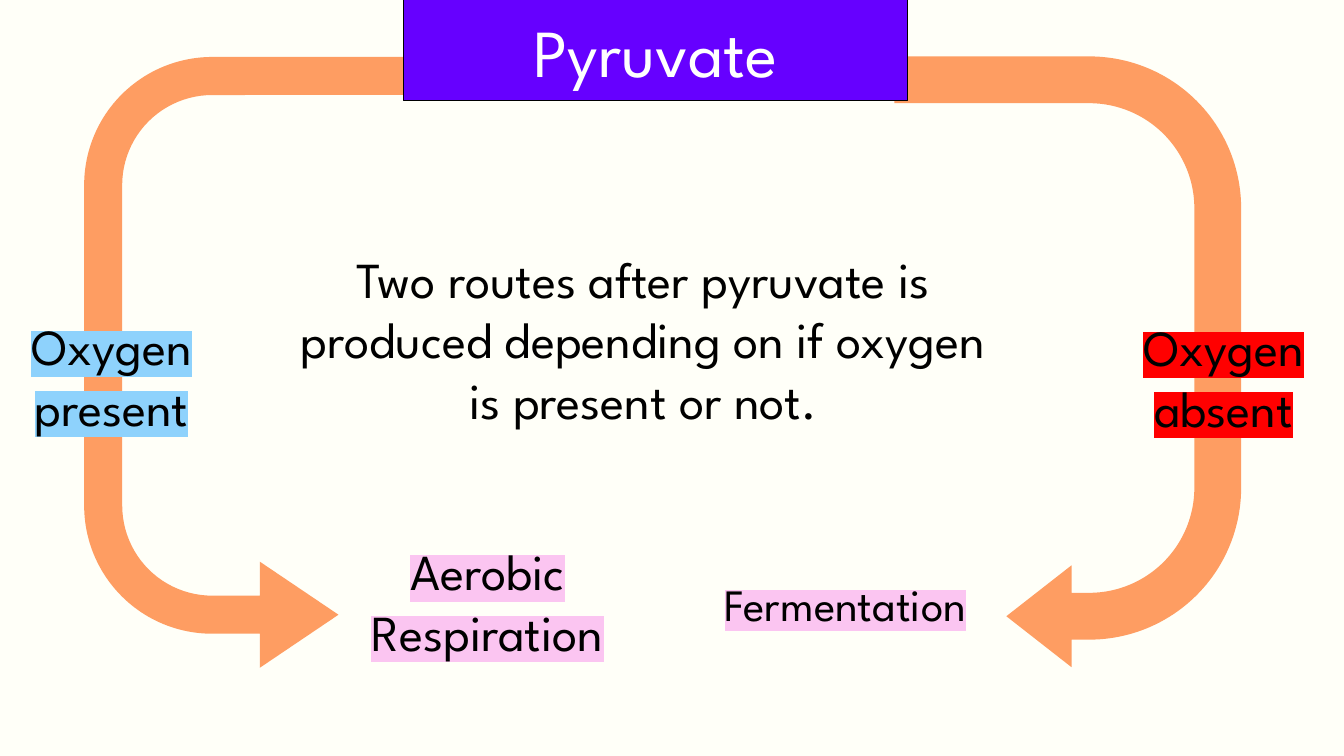
from lxml import etree
from pptx import Presentation
from pptx.dml.color import RGBColor
from pptx.enum.shapes import MSO_SHAPE
from pptx.enum.text import MSO_ANCHOR, MSO_AUTO_SIZE, PP_ALIGN
from pptx.oxml.ns import qn
from pptx.util import Inches, Pt

FONT = "League Spartan"
CREAM = RGBColor(0xFF, 0xFF, 0xF8)
ORANGE = RGBColor(0xFE, 0x9D, 0x62)
PURPLE = RGBColor(0x66, 0x00, 0xFF)
BLACK = RGBColor(0x00, 0x00, 0x00)
WHITE = RGBColor(0xFF, 0xFF, 0xFF)
PINK = RGBColor(0xFB, 0xC5, 0xF1)
BLUE = RGBColor(0x8E, 0xD2, 0xFC)
RED = RGBColor(0xFF, 0x00, 0x00)

prs = Presentation()
prs.slide_width, prs.slide_height = Inches(13.33), Inches(7.5)
s = prs.slides.add_slide(prs.slide_layouts[6])
s.background.fill.solid()
s.background.fill.fore_color.rgb = CREAM


def write(shape, text, size, color, highlight=None):
    tf = shape.text_frame
    tf.word_wrap = True
    tf.auto_size = MSO_AUTO_SIZE.SHAPE_TO_FIT_TEXT
    p = tf.paragraphs[0]
    p.alignment = PP_ALIGN.CENTER
    r = p.add_run()
    r.text = text
    r.font.size = Pt(size)
    r.font.name = FONT
    r.font.color.rgb = color
    if highlight is not None:
        hl = etree.Element(qn("a:highlight"))
        etree.SubElement(hl, qn("a:srgbClr")).set("val", str(highlight))
        r.font.fill._xPr.find(qn("a:solidFill")).addnext(hl)


def add_label(left, top, width, height, text, size, highlight=None):
    box = s.shapes.add_textbox(Inches(left), Inches(top), Inches(width), Inches(height))
    write(box, text, size, BLACK, highlight)


# Central statement
add_label(2.67, 2.41, 7.42, 1.92,
          "Two routes after pyruvate is produced depending on if oxygen is present or not.", 36)

# Route arrows: right, then mirrored left
for left, top, height, adjustments, mirrored in [
    (7.56, 1.87, 3.44, (0.135, 0.147, 0.188, 0.438, 0.677), False),
    (-0.38, 1.78, 3.63, (0.104, 0.145, 0.215, 0.35, 0.695), True),
]:
    arrow = s.shapes.add_shape(MSO_SHAPE.U_TURN_ARROW, Inches(left), Inches(top),
                               Inches(6.06), Inches(height))
    arrow.shadow.inherit = False
    arrow.rotation = 90
    for i, value in enumerate(adjustments):
        arrow.adjustments[i] = value
    if mirrored:
        arrow._element.spPr.find(qn("a:xfrm")).set("flipV", "1")
    arrow.fill.solid()
    arrow.fill.fore_color.rgb = ORANGE
    arrow.line.fill.background()

# Hand-cut banner
top_edge = [(4.8, 0.31), (5.11, 0.32), (5.4, 0.33), (5.71, 0.32), (6.1, 0.32), (6.49, 0.32),
            (6.88, 0.31), (7.27, 0.32), (7.68, 0.31), (8.09, 0.32), (8.48, 0.32), (8.87, 0.32)]
bottom_edge = [(8.87, 0.77), (8.87, 1.23), (8.55, 1.22), (8.23, 1.23), (7.9, 1.24), (7.58, 1.23),
               (7.28, 1.22), (6.98, 1.23), (6.33, 1.23), (5.9, 1.24), (5.5, 1.23), (5.0, 1.22),
               (4.46, 1.23), (4.46, 0.8)]
outline = s.shapes.build_freeform(4.46, 0.32, scale=Inches(1))
outline.add_line_segments(top_edge + bottom_edge, close=True)
banner = outline.convert_to_shape()
banner.shadow.inherit = False
banner.fill.solid()
banner.fill.fore_color.rgb = PURPLE
banner.line.color.rgb = BLACK
banner.line.width = Pt(0.75)
banner.text_frame.vertical_anchor = MSO_ANCHOR.MIDDLE
write(banner, "Pyruvate", 48, WHITE)

# Highlighted outcomes and conditions
for left, top, height, text, size, highlight in [
    (3.29, 5.31, 1.31, "Aerobic Respiration", 36, PINK),
    (6.84, 5.67, 0.64, "Fermentation", 32, PINK),
    (-0.44, 3.08, 1.31, "Oxygen present", 36, BLUE),
    (10.59, 3.09, 1.31, "Oxygen absent", 36, RED),
]:
    add_label(left, top, 3.09, height, text, size, highlight)

prs.save("out.pptx")
